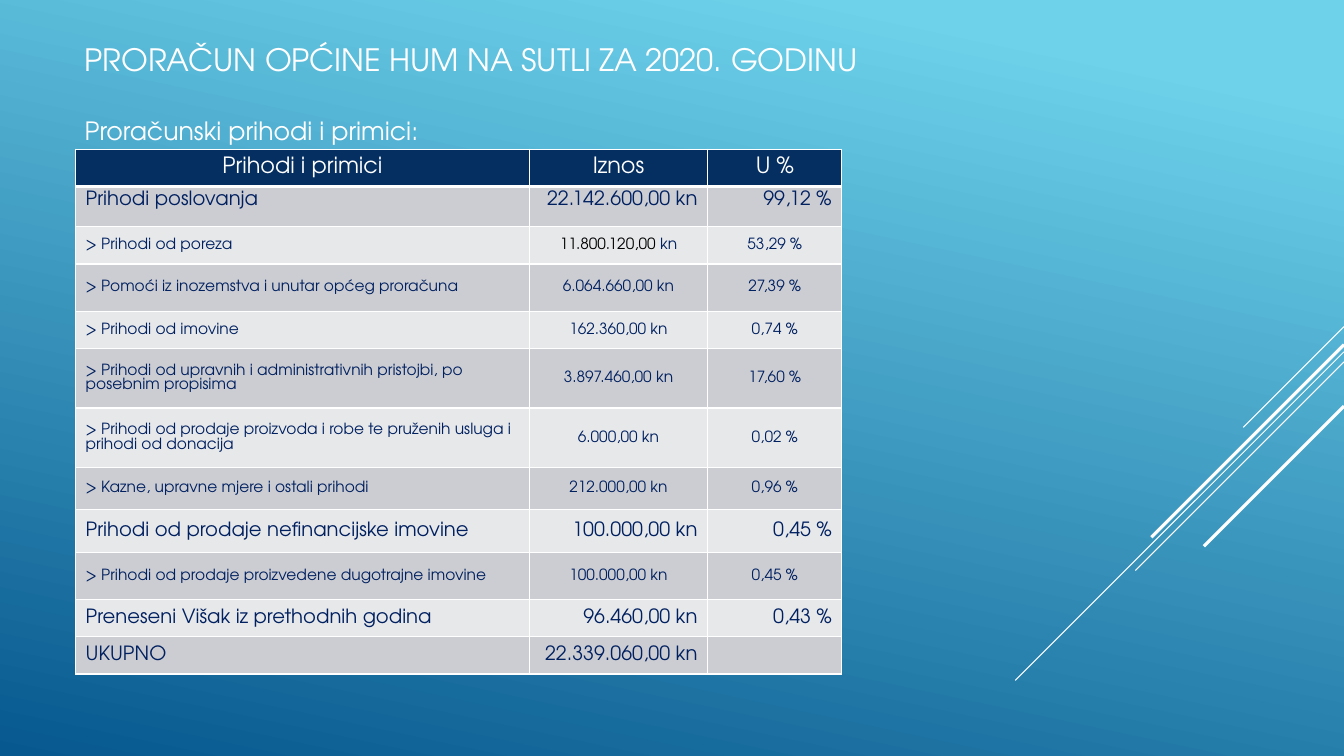
import pptx
import pptx.util
import pptx.dml.color
import pptx.enum.shapes
import pptx.enum.text
import pptx.oxml
import pptx.oxml.ns

FONT = "TeX Gyre Adventor"
COLORS = {"sky": "6ED2EB", "deep": "06588E", "white": "FFFFFF", "black": "000000",
          "header": "052F61", "navy": "002060", "dark_band": "CCCDD2", "light_band": "E7E8EA"}
TITLE = [("PRORAČUN OPĆINE HUM NA SUTLI ZA 2020. GODINU", 22, 0),
         ("Proračunski prihodi i primici:", 18, 27)]  # text, size, space before
COLUMNS = [4.5, 1.77, 1.33]
# row kind, height, cell texts
ROWS = [
    ("head", 0.37, "Prihodi i primici", "Iznos", "U %"),
    ("main", 0.4, "Prihodi poslovanja", "22.142.600,00 kn", "99,12 %"),
    ("item", 0.37, "> Prihodi od poreza", "11.800.120,00 kn", "53,29 %"),
    ("item", 0.47, "> Pomoći iz inozemstva i unutar općeg proračuna", "6.064.660,00 kn", "27,39 %"),
    ("item", 0.37, "> Prihodi od imovine", "162.360,00 kn", "0,74 %"),
    ("item", 0.59, "> Prihodi od upravnih i administrativnih pristojbi, po posebnim propisima",
     "3.897.460,00 kn", "17,60 %"),
    ("item", 0.59, "> Prihodi od prodaje proizvoda i robe te pruženih usluga i prihodi od donacija",
     "6.000,00 kn", "0,02 %"),
    ("item", 0.42, "> Kazne, upravne mjere i ostali prihodi", "212.000,00 kn", "0,96 %"),
    ("main", 0.42, "Prihodi od prodaje nefinancijske imovine", "100.000,00 kn", "0,45 %"),
    ("item", 0.47, "> Prihodi od prodaje proizvedene dugotrajne imovine", "100.000,00 kn", "0,45 %"),
    ("main", 0.37, "Preneseni Višak iz prethodnih godina", "96.460,00 kn", "0,43 %"),
    ("main", 0.37, "UKUPNO", "22.339.060,00 kn", ""),
]
ALIGN = pptx.enum.text.PP_ALIGN
ANCHOR = pptx.enum.text.MSO_ANCHOR
# size, colour, alignment of first column and of the others
KINDS = {"head": (16, "white", ALIGN.CENTER, ALIGN.CENTER),
         "main": (14, "navy", ALIGN.LEFT, ALIGN.RIGHT),
         "item": (11, "navy", ALIGN.LEFT, ALIGN.CENTER)}
BLACK_AMOUNT = "11.800.120,00 "
# start height on the right edge, drop along the 45° diagonal, width
DIAGONALS = [(3.24, 1, 0.75), (3.49, 3.26, 0.75), (3.59, 2.07, 0.75),
             (3.42, 1.91, 2.25), (4.03, 1.39, 2.25)]
WIDTH, HEIGHT = 13.33, 7.5
inch, pt = pptx.util.Inches, pptx.util.Pt


def rgb(name):
    return pptx.dml.color.RGBColor.from_string(COLORS[name])


def add_run(p, text, size, color):
    r = p.add_run()
    r.text = text
    r.font.name, r.font.size = FONT, pt(size)
    r.font.color.rgb = rgb(color)


def set_borders(cell, widths):
    """Draw white borders; widths are points for left, right, top, bottom."""
    tc_pr = cell._tc.get_or_add_tcPr()
    for i, (side, width) in enumerate(zip("LRTB", widths)):
        tc_pr.insert(i, pptx.oxml.parse_xml(
            f'<a:ln{side} {pptx.oxml.ns.nsdecls("a")} w="{pt(width)}"><a:solidFill>'
            f'<a:srgbClr val="{COLORS["white"]}"/></a:solidFill></a:ln{side}>'))


def add_background(s):
    fill = s.background.fill
    fill.gradient()
    fill.gradient_angle = 360 - 102
    for stop, (color, position) in zip(fill.gradient_stops, [("sky", 0.1), ("deep", 1)]):
        stop.color.rgb, stop.position = rgb(color), position


def add_diagonals(s):
    for top, drop, width in DIAGONALS:
        line = s.shapes.add_connector(pptx.enum.shapes.MSO_CONNECTOR.STRAIGHT, inch(WIDTH),
                                      inch(top), inch(WIDTH - drop), inch(top + drop))
        line.line.color.rgb, line.line.width = rgb("white"), pt(width)
        line._element.spPr.append(
            pptx.oxml.parse_xml(f'<a:effectLst {pptx.oxml.ns.nsdecls("a")}/>'))


def add_title(s):
    sp = s.shapes.title
    sp.left, sp.top, sp.width, sp.height = map(inch, (0.74, 0.17, 10.58, 1.5))
    tf = sp.text_frame
    tf.word_wrap, tf.auto_size = True, pptx.enum.text.MSO_AUTO_SIZE.NONE
    tf.vertical_anchor = ANCHOR.MIDDLE
    for i, (text, size, before) in enumerate(TITLE):
        p = tf.add_paragraph() if i else tf.paragraphs[0]
        p.alignment, p.line_spacing, p.space_before = ALIGN.LEFT, 1.0, pt(before)
        add_run(p, text, size, "white")


def add_budget(s):
    heights = [row[1] for row in ROWS]
    table = s.shapes.add_table(len(ROWS), len(COLUMNS), inch(0.75), inch(1.48),
                               inch(sum(COLUMNS)), inch(sum(heights))).table
    for column, width in zip(table.columns, COLUMNS):
        column.width = inch(width)
    for i, (kind, height, *texts) in enumerate(ROWS):
        table.rows[i].height = inch(height)
        size, color, first, others = KINDS[kind]
        band = "header" if i == 0 else "dark_band" if i % 2 else "light_band"
        for j, text in enumerate(texts):
            cell = table.cell(i, j)
            cell.fill.solid()
            cell.fill.fore_color.rgb = rgb(band)
            set_borders(cell, (1, 1, 3 if i == 1 else 1, 3 if i == 0 else 1))
            cell.vertical_anchor = ANCHOR.TOP if i == 1 else ANCHOR.MIDDLE
            if not text:
                cell.margin_top = cell.margin_bottom = 0
                continue
            p = cell.text_frame.paragraphs[0]
            p.alignment = others if j else first
            if text.startswith(BLACK_AMOUNT):
                add_run(p, BLACK_AMOUNT, size, "black")
                text = text[len(BLACK_AMOUNT):]
            add_run(p, text, size, color)


def main():
    prs = pptx.Presentation()
    prs.slide_width, prs.slide_height = inch(WIDTH), inch(HEIGHT)
    s = prs.slides.add_slide(prs.slide_layouts[5])
    add_background(s)
    add_diagonals(s)
    add_title(s)
    add_budget(s)
    prs.save("out.pptx")


if __name__ == "__main__":
    main()
